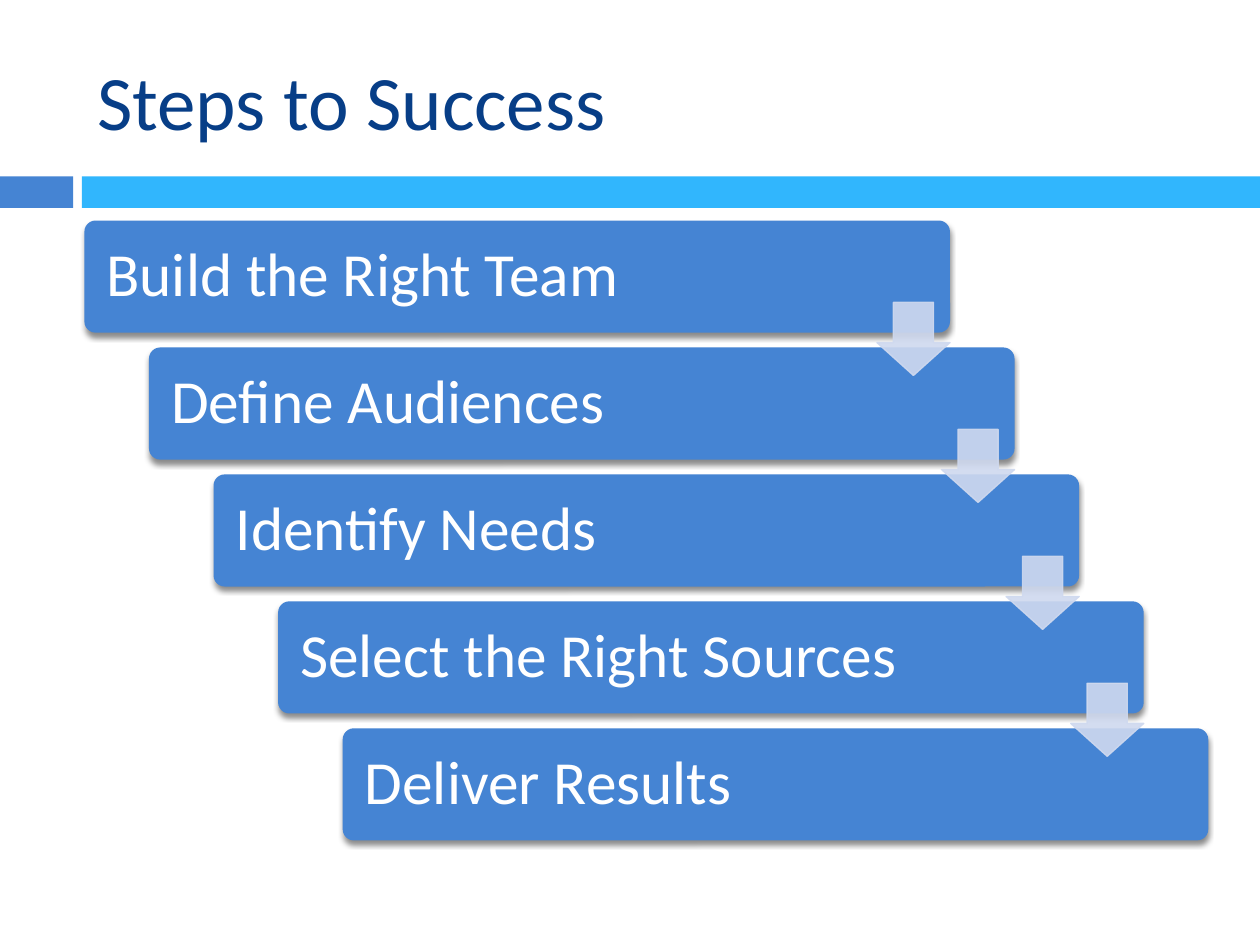
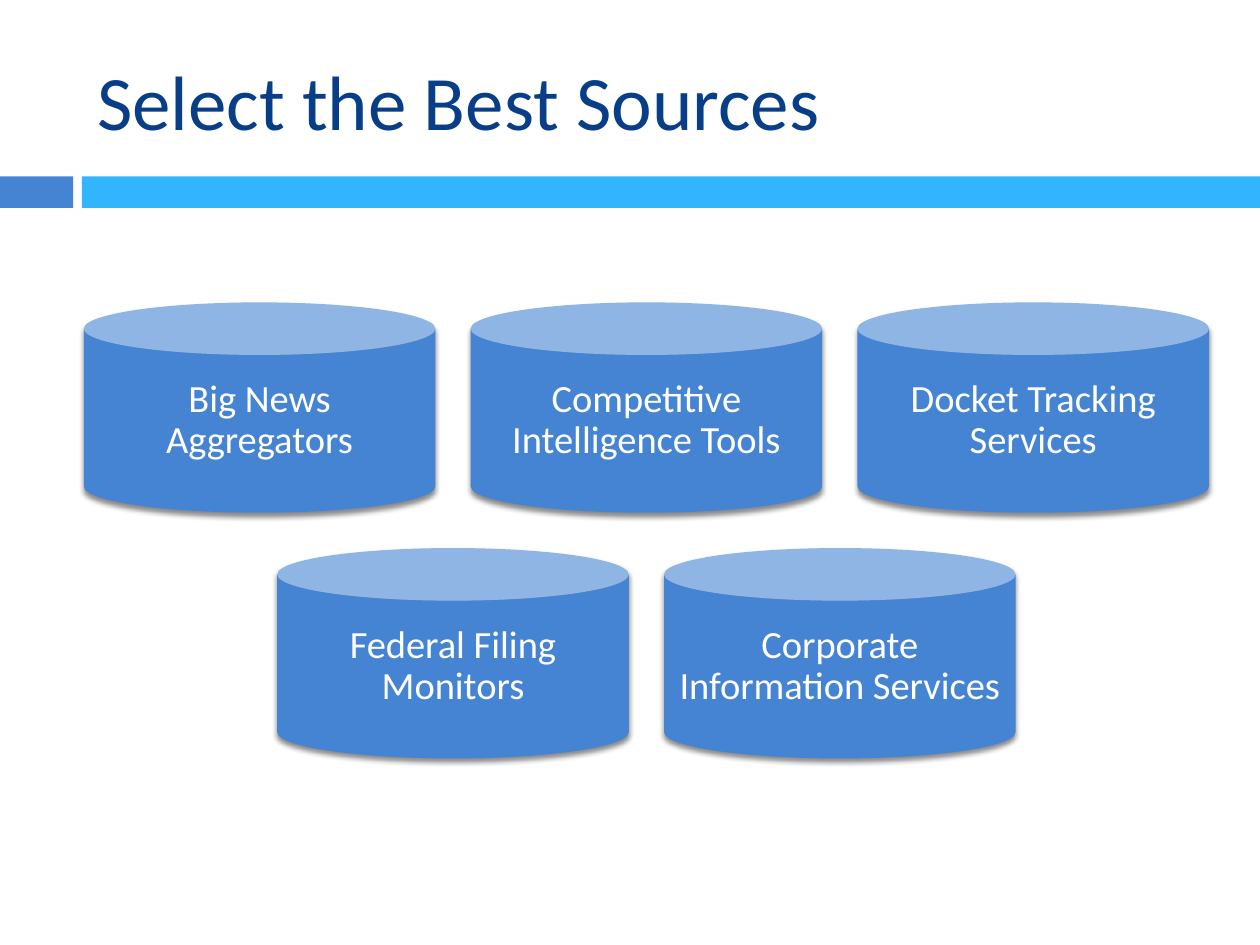
from lxml import etree
from pptx import Presentation
from pptx.dml.color import RGBColor
from pptx.enum.shapes import MSO_SHAPE
from pptx.enum.text import MSO_ANCHOR, PP_ALIGN
from pptx.oxml.ns import qn
from pptx.util import Inches, Pt

RECT, ROUNDED = MSO_SHAPE.RECTANGLE, MSO_SHAPE.ROUNDED_RECTANGLE
CAN, DOWN_ARROW = MSO_SHAPE.CAN, MSO_SHAPE.DOWN_ARROW
LEFT, CENTER = PP_ALIGN.LEFT, PP_ALIGN.CENTER
MIDDLE = MSO_ANCHOR.MIDDLE

# Content
STEPS_TITLE = "Steps to Success"
STEPS = [
    "Build the Right Team",
    "Define Audiences",
    "Identify Needs",
    "Select the Right Sources",
    "Deliver Results",
]
SOURCES_TITLE = "Select the Best Sources"
SOURCE_ROWS = [
    ["Big News Aggregators", "Competitive Intelligence Tools", "Docket Tracking Services"],
    ["Federal Filing Monitors", "Corporate Information Services"],
]

# Shared style
FONT = "Calibri"
NAVY = RGBColor(0x07, 0x3E, 0x87)
BLUE = RGBColor(0x45, 0x84, 0xD3)
SKY = RGBColor(0x31, 0xB6, 0xFD)
PALE = RGBColor(0xCF, 0xD9, 0xEF)
WHITE = RGBColor(0xFF, 0xFF, 0xFF)
SLIDE_W, SLIDE_H = 10, 7.5
CONTENT_LEFT, CONTENT_W = 0.67, 8.92
BANDS = [(0, 0.58, BLUE), (0.65, 9.35, SKY)]  # left, width, colour
BAND_TOP, BAND_H = 1.4, 0.25


def add_filled(slide, kind, left, top, width, height, color):
    shape = slide.shapes.add_shape(
        kind, Inches(left), Inches(top), Inches(width), Inches(height))
    shape.shadow.inherit = False
    shape.fill.solid()
    shape.fill.fore_color.rgb = color
    shape.line.fill.background()
    return shape


def write(shape, text, size, color, align):
    frame = shape.text_frame
    frame.word_wrap = True
    frame.vertical_anchor = MIDDLE
    paragraph = frame.paragraphs[0]
    paragraph.alignment = align
    run = paragraph.add_run()
    run.text = text
    run.font.name = FONT
    run.font.size = Pt(size)
    run.font.color.rgb = color
    return frame


def add_block(slide, kind, box, text, size, inset, align):
    """Blue block with a soft drop shadow and white text."""
    block = add_filled(slide, kind, *box, BLUE)
    effects = block._element.spPr.find(qn("a:effectLst"))
    shadow = etree.SubElement(
        effects, qn("a:outerShdw"), blurRad=str(Pt(3)), dist=str(Pt(2.4)),
        dir="5400000", rotWithShape="0")
    shadow_color = etree.SubElement(shadow, qn("a:srgbClr"), val="000000")
    etree.SubElement(shadow_color, qn("a:alpha"), val="45000")
    frame = write(block, text, size, WHITE, align)
    frame.margin_left = frame.margin_right = Inches(inset)
    frame.margin_top = frame.margin_bottom = Inches(inset)
    frame.paragraphs[0].line_spacing = 0.9
    return block


def add_step_arrow(slide, left, top, side):
    arrow = add_filled(slide, DOWN_ARROW, left, top, side, side, PALE)
    arrow.adjustments[0], arrow.adjustments[1] = 0.55, 0.45
    arrow.line.color.rgb = PALE
    arrow.line.width = Pt(0.79)
    for color in arrow._element.spPr.iter(qn("a:srgbClr")):
        etree.SubElement(color, qn("a:alpha"), val="90000")


def add_titled_slide(prs, title_text):
    slide = prs.slides.add_slide(prs.slide_layouts[5])
    title = slide.shapes.title
    title.left, title.top = Inches(CONTENT_LEFT), Inches(0.25)
    title.width, title.height = Inches(CONTENT_W), Inches(1.08)
    write(title, title_text, 44, NAVY, LEFT)
    for left, width, color in BANDS:
        add_filled(slide, RECT, left, BAND_TOP, width, BAND_H, color)
    return slide


def build_steps(prs):
    slide = add_titled_slide(prs, STEPS_TITLE)
    top, area_h = 1.75, 4.92
    step_w, step_h, arrow_side, arrow_drop = 6.87, 0.89, 0.58, 0.65
    shift_x = (CONTENT_W - step_w) / (len(STEPS) - 1)
    shift_y = (area_h - step_h) / (len(STEPS) - 1)
    corners = [(CONTENT_LEFT + i * shift_x, top + i * shift_y)
               for i in range(len(STEPS))]

    # Staircase of steps
    for (x, y), step in zip(corners, STEPS):
        block = add_block(slide, ROUNDED, (x, y, step_w, step_h), step, 35, 0.15, LEFT)
        block.adjustments[0] = 0.1

    # Arrows at the right end of every step but the last
    for x, y in corners[:-1]:
        add_step_arrow(slide, x + step_w - arrow_side, y + arrow_drop, arrow_side)


def build_sources(prs):
    slide = add_titled_slide(prs, SOURCES_TITLE)
    top, can_w, can_h, gap = 2.4, 2.79, 1.67, 0.28

    # Rows of cans, each row centred in the content area
    for row, sources in enumerate(SOURCE_ROWS):
        row_w = len(sources) * (can_w + gap) - gap
        left = CONTENT_LEFT + (CONTENT_W - row_w) / 2
        y = top + row * (can_h + gap)
        for column, source in enumerate(sources):
            x = left + column * (can_w + gap)
            add_block(slide, CAN, (x, y, can_w, can_h), source, 22, 0.09, CENTER)


def main():
    prs = Presentation()
    prs.slide_width, prs.slide_height = Inches(SLIDE_W), Inches(SLIDE_H)
    build_steps(prs)
    build_sources(prs)
    prs.save("out.pptx")


if __name__ == "__main__":
    main()
